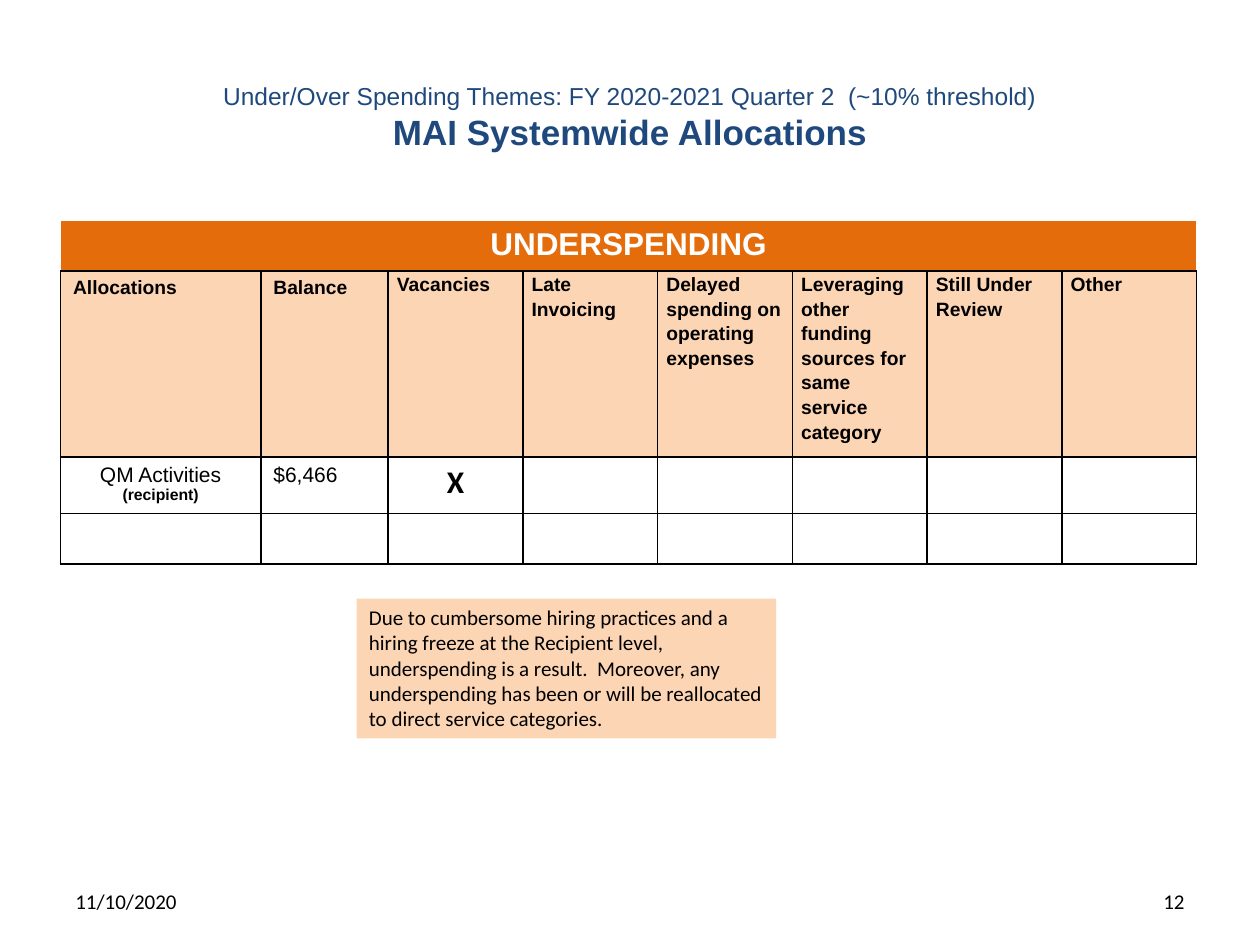
import pptx
import pptx.dml.color
import pptx.enum.shapes
import pptx.enum.text
import pptx.oxml
import pptx.oxml.ns
import pptx.util
from pptx.util import Inches

COLORS = {
    "navy": "1F497D",
    "orange": "E46C0A",
    "peach": "FCD5B5",
    "white": "FFFFFF",
    "black": "000000",
}
ALIGN = pptx.enum.text.PP_ALIGN
ANCHOR = pptx.enum.text.MSO_ANCHOR

COLUMN_WIDTHS = [1.59, 1.01] + [1.07] * 6
ROW_HEIGHTS = [0.38, 1.37, 0.43, 0.38]
HEADINGS = [
    "Allocations",
    "Balance",
    "Vacancies",
    "Late Invoicing",
    "Delayed spending on operating expenses",
    "Leveraging other funding sources for same service category",
    "Still Under Review",
    "Other",
]


def rgb(name):
    return pptx.dml.color.RGBColor.from_string(COLORS[name])


def add_span(para, text, size=12, font="Arial", color="black", bold=False):
    span = para.add_run()
    span.text = text
    span.font.size = pptx.util.Pt(size)
    span.font.name = font
    span.font.bold = bold
    span.font.color.rgb = rgb(color)


def write(frame, text, align=ALIGN.LEFT, spacing=None, new_para=False, **style):
    """Write text into the first paragraph of a frame, or into a new one."""
    para = frame.add_paragraph() if new_para else frame.paragraphs[0]
    para.alignment = align
    if spacing:
        para.line_spacing = spacing
    add_span(para, text, **style)
    return para


def add_text_box(page, left, top, width, height, anchor=ANCHOR.MIDDLE):
    box = page.shapes.add_textbox(*map(Inches, (left, top, width, height)))
    box.text_frame.word_wrap = True
    box.text_frame.vertical_anchor = anchor
    return box.text_frame


def add_title(page, left, top, width, height):
    frame = add_text_box(page, left, top, width, height)
    para = write(
        frame,
        "Under/Over Spending Themes: FY 2020-2021 Quarter 2  (~10% threshold)",
        align=ALIGN.CENTER, size=14, color="navy",
    )
    para.add_line_break()
    add_span(para, "MAI Systemwide Allocations", size=20, color="navy", bold=True)


def set_borders(cell, **colors):
    """Give a cell 1 pt borders, black unless a side (L, R, T, B) is named."""
    properties = cell._tc.get_or_add_tcPr()
    for index, side in enumerate("LRTB"):
        color = COLORS[colors.get(side, "black")]
        line = pptx.oxml.parse_xml(
            f'<a:ln{side} {pptx.oxml.ns.nsdecls("a")} w="12700">'
            f'<a:solidFill><a:srgbClr val="{color}"/></a:solidFill></a:ln{side}>'
        )
        properties.insert(index, line)


def add_spending_table(page, left, top):
    table = page.shapes.add_table(
        len(ROW_HEIGHTS), len(COLUMN_WIDTHS), Inches(left), Inches(top),
        Inches(sum(COLUMN_WIDTHS)), Inches(sum(ROW_HEIGHTS)),
    ).table
    table.first_row = table.horz_banding = False
    for column, width in zip(table.columns, COLUMN_WIDTHS):
        column.width = Inches(width)

    row_fills = ["orange", "peach", "white", "white"]
    for row, height, fill in zip(table.rows, ROW_HEIGHTS, row_fills):
        row.height = Inches(height)
        for cell in row.cells:
            cell.fill.solid()
            cell.fill.fore_color.rgb = rgb(fill)
            if fill == "orange":
                set_borders(cell, L="white", R="white", T="white")
            else:
                set_borders(cell)

    banner = table.cell(0, 0)
    banner.merge(table.cell(0, len(COLUMN_WIDTHS) - 1))
    write(banner.text_frame, "UNDERSPENDING", align=ALIGN.CENTER,
          size=18, color="white", bold=True)

    for index, heading in enumerate(HEADINGS):
        cell = table.cell(1, index)
        is_theme = index >= 2
        if is_theme:
            cell.margin_left = cell.margin_right = Inches(0.07)
            cell.margin_top = cell.margin_bottom = 0
        write(cell.text_frame, heading, size=11, bold=True,
              spacing=1.15 if is_theme else None)

    activity, balance, vacancies = [table.cell(2, index).text_frame for index in range(3)]
    write(activity, "QM Activities", align=ALIGN.CENTER)
    write(activity, "(recipient)", align=ALIGN.CENTER, new_para=True, size=9, bold=True)
    write(balance, "$6,466")
    write(vacancies, "X", align=ALIGN.CENTER, size=18, font="Calibri", bold=True)


def add_note(page, left, top, width, height):
    box = page.shapes.add_shape(
        pptx.enum.shapes.MSO_SHAPE.RECTANGLE,
        *map(Inches, (left, top, width, height)),
    )
    box.shadow.inherit = False
    box.fill.solid()
    box.fill.fore_color.rgb = rgb("peach")
    box.line.fill.background()
    frame = box.text_frame
    frame.word_wrap = True
    frame.vertical_anchor = ANCHOR.TOP
    frame.auto_size = pptx.enum.text.MSO_AUTO_SIZE.SHAPE_TO_FIT_TEXT
    write(
        frame,
        "Due to cumbersome hiring practices and a hiring freeze at the Recipient "
        "level, underspending is a result.  Moreover, any underspending has been "
        "or will be reallocated to direct service categories.",
        font="Calibri",
    )


def add_footer(page, left, top, width, height):
    part_width = 2.33
    date = add_text_box(page, left, top, part_width, height)
    write(date, "11/10/2020", font="Calibri")
    number = add_text_box(page, left + width - part_width, top, part_width, height)
    write(number, "12", align=ALIGN.RIGHT, font="Calibri")


def main():
    deck = pptx.Presentation()
    deck.slide_width, deck.slide_height = Inches(10), Inches(7.5)
    page = deck.slides.add_slide(deck.slide_layouts[6])
    add_title(page, 0.5, 0.3, 9, 1.25)
    add_spending_table(page, 0.48, 1.75)
    add_footer(page, 0.5, 6.95, 9, 0.4)
    add_note(page, 2.83, 4.75, 3.33, 1.11)
    deck.save("out.pptx")


if __name__ == "__main__":
    main()
